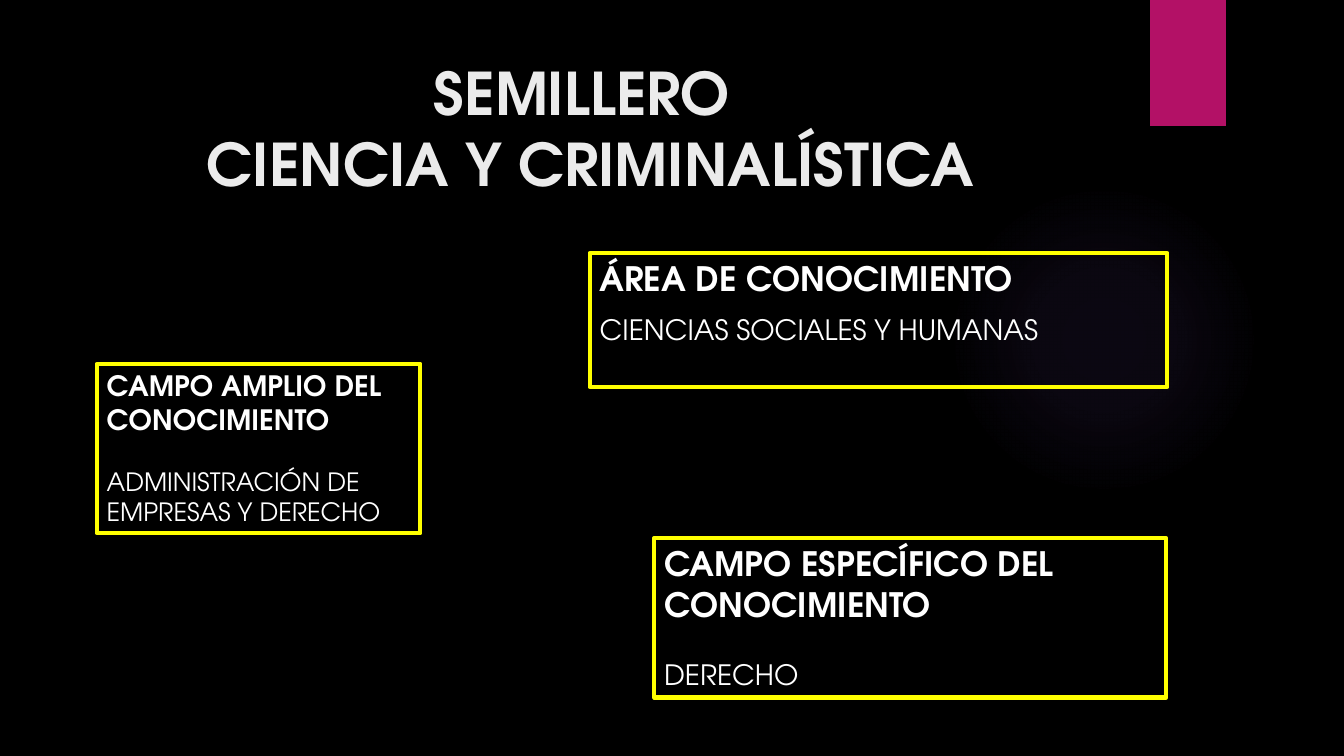
"""Builds the slide on a research group's knowledge areas."""
from pptx import Presentation
from pptx import util as u
from pptx.dml.color import RGBColor
from pptx.enum import shapes, text
from pptx.oxml import parse_xml
from pptx.oxml.ns import nsdecls

BLACK = RGBColor(0x00, 0x00, 0x00)
WHITE = RGBColor(0xFF, 0xFF, 0xFF)
LIGHT_GREY = RGBColor(0xEB, 0xEB, 0xEB)
MAGENTA = RGBColor(0xB3, 0x11, 0x66)
YELLOW = RGBColor(0xFF, 0xFF, 0x00)
VIOLET = RGBColor(0x9B, 0x6B, 0xF2)


class SlideBuilder:
    """Holds the style and the page; places are percentages of the slide's size."""

    font_name = "TeX Gyre Adventor"

    def __init__(self):
        self.deck = Presentation()
        self.deck.slide_width = u.Inches(13.33)
        self.deck.slide_height = u.Inches(7.5)
        self.page = self.deck.slides.add_slide(self.deck.slide_layouts[5])
        self.page.background.fill.solid()
        self.page.background.fill.fore_color.rgb = BLACK

    def frame(self, left, top, width, height):
        """Turns percentages into slide lengths."""
        across, down = self.deck.slide_width / 100, self.deck.slide_height / 100
        return int(left * across), int(top * down), int(width * across), int(height * down)

    def shape(self, kind, place):
        """Adds a plain shape without fill, line or shadow."""
        box = self.page.shapes.add_shape(kind, *self.frame(*place))
        box.shadow.inherit = False
        box.line.fill.background()
        return box

    def glow(self, place, color, stops):
        """Adds a circle whose colour fades outwards by (position, opacity) stops."""
        circle = self.shape(shapes.MSO_SHAPE.OVAL, place)
        marks = "".join(
            f'<a:gs pos="{position * 1000}"><a:srgbClr val="{color}">'
            f'<a:alpha val="{opacity * 1000}"/></a:srgbClr></a:gs>'
            for position, opacity in stops)
        fade = parse_xml(
            f'<a:gradFill {nsdecls("a")} rotWithShape="1"><a:gsLst>{marks}</a:gsLst>'
            '<a:path path="circle"><a:fillToRect l="50000" t="50000" r="50000" b="50000"/>'
            '</a:path></a:gradFill>')
        circle._element.spPr[1].addnext(fade)

    def tab(self, place, color):
        """Adds a solid rectangle."""
        box = self.shape(shapes.MSO_SHAPE.RECTANGLE, place)
        box.fill.solid()
        box.fill.fore_color.rgb = color

    def style(self, para, size, color, bold, align):
        """Formats every run of a paragraph."""
        para.alignment = align
        for span in para.runs:
            span.font.name = self.font_name
            span.font.size = u.Pt(size)
            span.font.bold = bold
            span.font.color.rgb = color

    def title(self, place, words, size):
        """Places and formats the title placeholder."""
        box = self.page.shapes.title
        box.left, box.top, box.width, box.height = self.frame(*place)
        box.text_frame.text = words
        box.text_frame.word_wrap = True
        box.text_frame.vertical_anchor = text.MSO_ANCHOR.MIDDLE
        self.style(box.text_frame.paragraphs[0], size, LIGHT_GREY, True, text.PP_ALIGN.CENTER)

    def card(self, place, heading, detail, sizes, gap):
        """Adds an outlined box with a bold heading and a detail below."""
        box = self.shape(shapes.MSO_SHAPE.RECTANGLE, place)
        box.fill.background()
        box.line.color.rgb = YELLOW
        box.line.width = u.Pt(3)
        box.text_frame.word_wrap = True
        box.text_frame.vertical_anchor = text.MSO_ANCHOR.TOP
        box.text_frame.text = f"{heading}\n{detail}"
        paras = box.text_frame.paragraphs
        for para, size, bold in zip(paras, sizes, (True, False)):
            self.style(para, size, WHITE, bold, text.PP_ALIGN.LEFT)
        paras[1].space_before = u.Pt(gap)


def main():
    """Builds and saves the slide."""
    slide = SlideBuilder()
    slide.glow((70.58, 24.4, 23.1, 41.07), VIOLET, [(0, 7), (36, 6), (69, 0), (100, 0)])
    slide.tab((85.58, 0, 5.63, 16.67), MAGENTA)
    slide.title((5.33, 6.67, 77.18, 20.4), "SEMILLERO \vCIENCIA Y CRIMINALÍSTICA", 42)
    slide.card((43.88, 33.47, 42.98, 17.73), "ÁREA DE CONOCIMIENTO",
               "CIENCIAS SOCIALES Y HUMANAS", (24, 20), 10)
    slide.card((7.2, 48.13, 24.08, 22.4), "CAMPO AMPLIO DEL CONOCIMIENTO",
               "ADMINISTRACIÓN DE EMPRESAS Y DERECHO", (20, 18), 21.5)
    slide.card((48.68, 71.2, 38.1, 21.07), "CAMPO ESPECÍFICO DEL CONOCIMIENTO",
               "DERECHO", (24, 20), 24)
    slide.deck.save("out.pptx")


if __name__ == "__main__":
    main()
